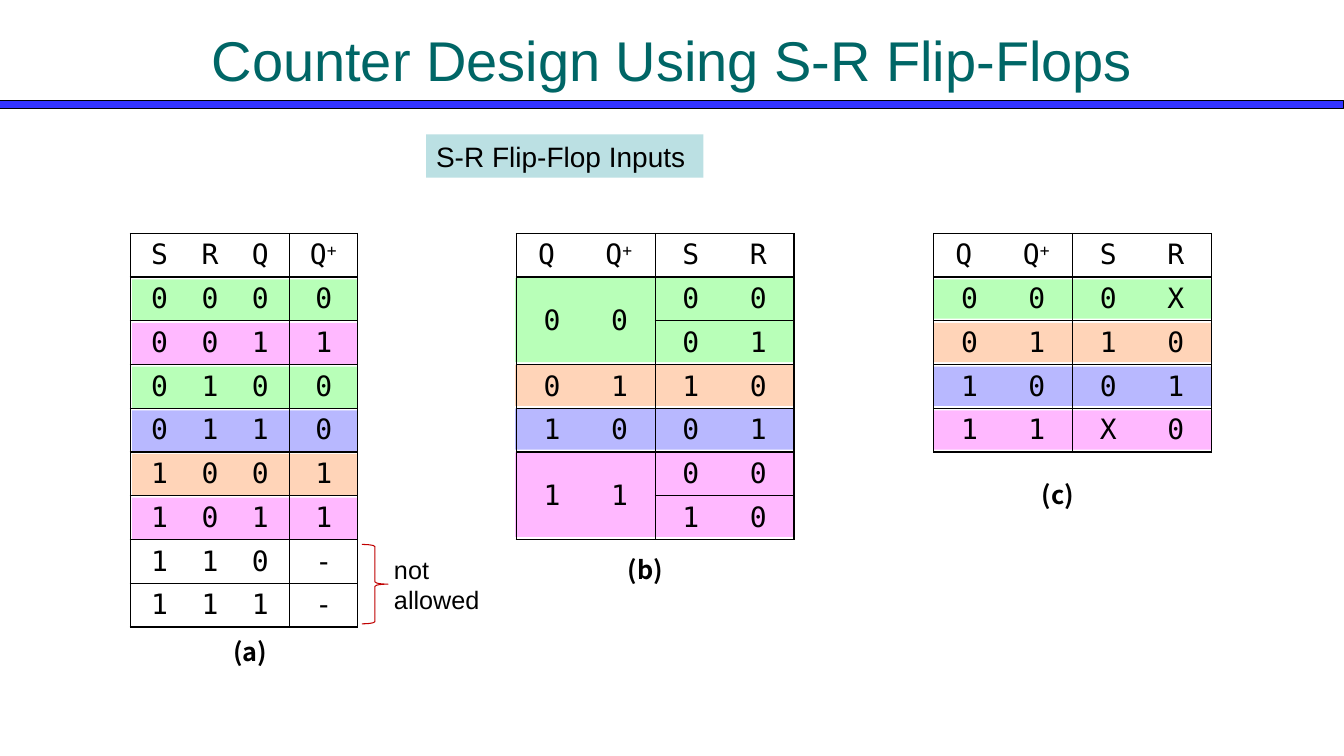
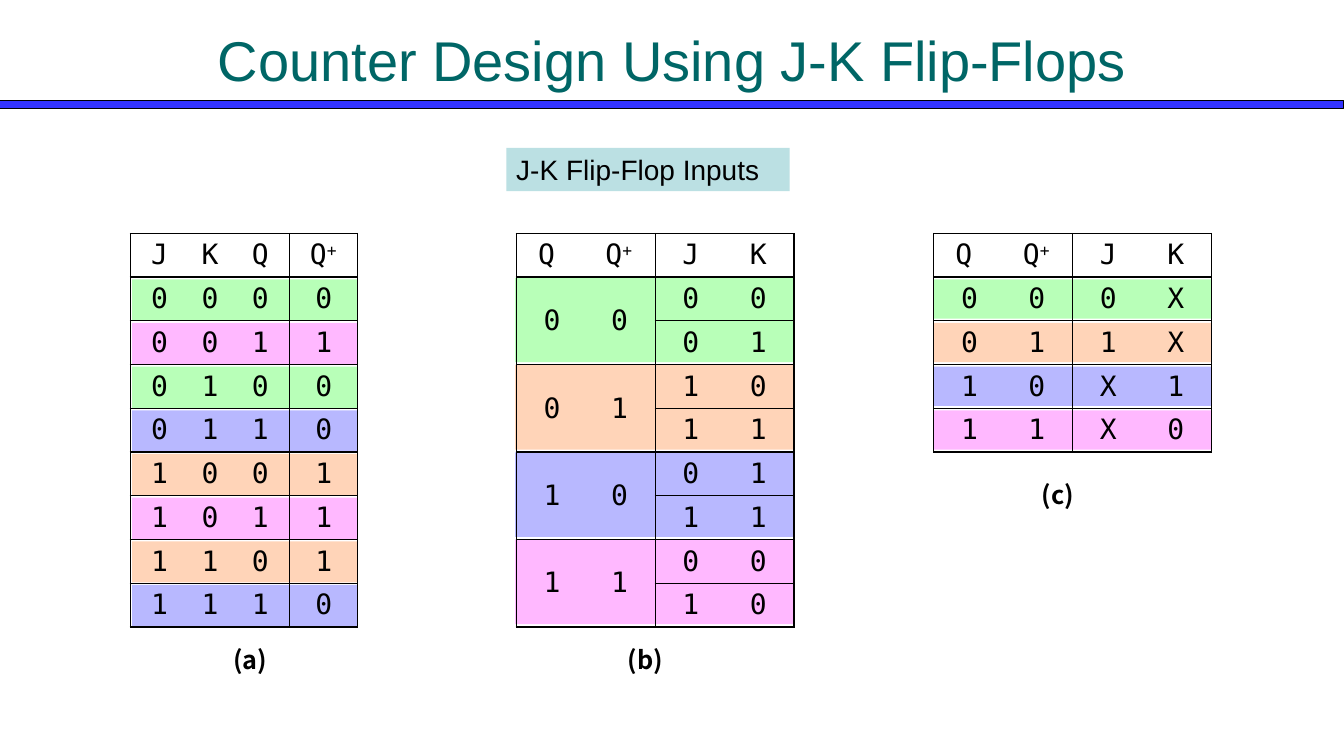
from itertools import groupby
from lxml.etree import SubElement
from pptx import Presentation
from pptx.dml.color import RGBColor
from pptx.enum.shapes import MSO_SHAPE
from pptx.enum.text import MSO_ANCHOR, PP_ALIGN
from pptx.oxml import parse_xml
from pptx.oxml.ns import nsdecls, qn
from pptx.util import Cm, Pt

# Colours
BLACK = RGBColor(0x00, 0x00, 0x00)
TEAL = RGBColor(0x00, 0x66, 0x66)
BAND_BLUE = RGBColor(0x33, 0x33, 0xFF)
LABEL_BLUE = RGBColor(0xBB, 0xE0, 0xE3)
BRACE_RED = RGBColor(0xC0, 0x00, 0x00)
TRANSITION_COLOURS = {  # Q followed by Q+
    "00": RGBColor(0x00, 0xFF, 0x00),
    "01": RGBColor(0xFF, 0x66, 0x00),
    "10": RGBColor(0x00, 0x00, 0xFF),
    "11": RGBColor(0xFF, 0x00, 0xFF),
}
HIGHLIGHT_ALPHA = "28000"

# Text formats
TITLE_FONT = {"name": "Arial", "size": Pt(40), "bold": False}
LABEL_FONT = {"name": "Arial", "size": Pt(20)}
NOTE_FONT = {"name": "Arial", "size": Pt(18)}
CAPTION_FONT = {"name": "Noto Sans CJK KR", "size": Pt(18), "bold": True}
CELL_FONT = {"name": "DejaVu Sans Mono", "size": Pt(20), "bold": False}

# Table measures in cm
TABLE_TOP, ROW_HEIGHT = 5.88, 1.1
SYMBOL_WIDTH, PLUS_WIDTH = 0.42, 0.28
SYMBOL_PITCH = {1: 0, 2: 1.7, 3: 1.27}  # by symbols in a cell
TABLE_LEFTS = [3.28, 13.01, 23.53]
COLUMN_WIDTHS = [(4.02, 1.72), (3.5, 3.5), (3.5, 3.5)]
HIGHLIGHTS = [  # left, width, distance below the row's top, gap
    (3.33, 5.69, 0.06, 0.06), (12.98, 7.01, 0.02, 0.07), (23.52, 7.01, 0.06, 0.11)]
CAPTIONS = ["(a)", "(b)", "(c)"]
CAPTION_CENTRES = [6.3, 16.27, 26.66]

# Each table row holds the symbols of its left and right cell
SLIDES = [
    {
        "title": "Counter Design Using S-R Flip-Flops",
        "label": ("S-R Flip-Flop Inputs", 10.74, 3.39, 6.99, 1.09),
        "caption_tops": [15.9, 13.84, 11.96],
        "not_allowed": True,
        "tables": [
            ["SRQ Q+", "000 0", "001 1", "010 0", "011 0", "100 1", "101 1", "110 -", "111 -"],
            ["QQ+ SR", "00 00", "00 01", "01 10", "10 01", "11 00", "11 10"],
            ["QQ+ SR", "00 0X", "01 10", "10 01", "11 X0"],
        ],
    },
    {
        "title": "Counter Design Using J-K Flip-Flops",
        "label": ("J-K Flip-Flop Inputs", 12.76, 3.73, 7.14, 1.09),
        "caption_tops": [16.11, 16.11, 11.96],
        "not_allowed": False,
        "tables": [
            ["JKQ Q+", "000 0", "001 1", "010 0", "011 0", "100 1", "101 1", "110 1", "111 0"],
            ["QQ+ JK", "00 00", "00 01", "01 10", "01 11", "10 01", "10 11", "11 00", "11 10"],
            ["QQ+ JK", "00 0X", "01 1X", "10 X1", "11 X0"],
        ],
    },
]


def add_run(paragraph, text, font_format, colour=BLACK):
    run = paragraph.add_run()
    run.text = text
    for name, value in font_format.items():
        setattr(run.font, name, value)
    run.font.color.rgb = colour
    return run


def add_text_box(slide, text, left, top, width, height, font_format):
    box = slide.shapes.add_textbox(Cm(left), Cm(top), Cm(width), Cm(height))
    box.text_frame.word_wrap = True
    add_run(box.text_frame.paragraphs[0], text, font_format)
    return box


presentation = Presentation()
presentation.slide_width = Cm(33.87)
presentation.slide_height = Cm(19.05)
title_only = presentation.slide_layouts[5]

for content in SLIDES:
    slide = presentation.slides.add_slide(title_only)

    # Title and band
    title = slide.shapes.title
    title_box = {"left": Cm(1.69), "top": Cm(0.78), "width": Cm(30.48), "height": Cm(1.42)}
    for name, value in title_box.items():
        setattr(title, name, value)
    title.text_frame.vertical_anchor = MSO_ANCHOR.MIDDLE
    title_paragraph = title.text_frame.paragraphs[0]
    title_paragraph.alignment = PP_ALIGN.CENTER
    add_run(title_paragraph, content["title"], TITLE_FONT, TEAL)

    band = slide.shapes.add_shape(
        MSO_SHAPE.RECTANGLE, 0, Cm(2.53), presentation.slide_width, Cm(0.2))
    band.shadow.inherit = False
    band.fill.solid()
    band.fill.fore_color.rgb = BAND_BLUE
    band.line.color.rgb = BLACK
    band.line.width = Pt(0.75)

    # Label above the tables
    label = add_text_box(slide, *content["label"], LABEL_FONT)
    label.fill.solid()
    label.fill.fore_color.rgb = LABEL_BLUE

    for left, widths, highlight, rows in zip(
            TABLE_LEFTS, COLUMN_WIDTHS, HIGHLIGHTS, content["tables"]):
        cell_pairs = [row.split() for row in rows]

        # Translucent highlights, one for each run of equal transitions
        highlight_left, highlight_width, offset, gap = highlight
        transitions = [inputs if len(inputs) == 2 else inputs[-1] + outputs
                       for inputs, outputs in cell_pairs]
        row_top = TABLE_TOP
        for transition, group in groupby(transitions):
            group_height = ROW_HEIGHT * len(list(group))
            if transition in TRANSITION_COLOURS:
                shape = slide.shapes.add_shape(
                    MSO_SHAPE.RECTANGLE, Cm(highlight_left), Cm(row_top + offset),
                    Cm(highlight_width), Cm(group_height - gap))
                shape.shadow.inherit = False
                shape.line.fill.background()
                shape.fill.solid()
                shape.fill.fore_color.rgb = TRANSITION_COLOURS[transition]
                colour_element = shape._element.spPr.find(".//" + qn("a:srgbClr"))
                SubElement(colour_element, qn("a:alpha"), val=HIGHLIGHT_ALPHA)
            row_top += group_height

        # Table
        table = slide.shapes.add_table(
            len(rows), 2, Cm(left), Cm(TABLE_TOP),
            Cm(sum(widths)), Cm(ROW_HEIGHT * len(rows))).table
        table.first_row = table.horz_banding = False
        for column, width in zip(table.columns, widths):
            column.width = Cm(width)

        previous_inputs = None
        for row_index, (inputs, outputs) in enumerate(cell_pairs):
            table.rows[row_index].height = Cm(ROW_HEIGHT)
            repeated = inputs == previous_inputs
            previous_inputs = inputs

            for column_index, symbols in enumerate((inputs, outputs)):
                cell = table.cell(row_index, column_index)
                cell.vertical_anchor = MSO_ANCHOR.MIDDLE
                cell.fill.background()

                # Borders come before the fill in the cell properties
                properties = cell._tc.get_or_add_tcPr()
                for position, side in enumerate("LRTB"):
                    properties.insert(position, parse_xml(
                        f'<a:ln{side} {nsdecls("a")} w="12700"><a:solidFill>'
                        f'<a:srgbClr val="{BLACK}"/></a:solidFill></a:ln{side}>'))

                if repeated and column_index == 0:
                    table.cell(row_index - 1, 0).merge(cell)
                    continue

                # Symbols stand on tab stops, centred as a group
                letters = symbols.rstrip("+")
                has_plus = symbols != letters
                pitch = SYMBOL_PITCH[len(letters)]
                group_width = pitch * (len(letters) - 1) + SYMBOL_WIDTH + PLUS_WIDTH * has_plus
                cell.margin_left = Cm((widths[column_index] - group_width) / 2)
                cell.margin_right = 0
                paragraph = cell.text_frame.paragraphs[0]
                paragraph.alignment = PP_ALIGN.LEFT
                tab_list = SubElement(paragraph._p.get_or_add_pPr(), qn("a:tabLst"))
                for stop in range(1, len(letters)):
                    SubElement(tab_list, qn("a:tab"), pos=str(Cm(pitch * stop)), algn="l")
                add_run(paragraph, "\t".join(letters), CELL_FONT)
                if has_plus:
                    plus = add_run(paragraph, "+", CELL_FONT)
                    plus.font._element.set("baseline", "30000")

    # Captions
    for caption, centre, top in zip(CAPTIONS, CAPTION_CENTRES, content["caption_tops"]):
        box = add_text_box(slide, caption, centre - 1.27, top, 2.54, 1.02, CAPTION_FONT)
        box.text_frame.paragraphs[0].alignment = PP_ALIGN.CENTER

    # Brace for the input pairs that are not allowed
    if content["not_allowed"]:
        add_text_box(slide, "not allowed", 9.68, 13.84, 2.79, 1.8, NOTE_FONT)
        brace = slide.shapes.add_shape(
            MSO_SHAPE.RIGHT_BRACE, Cm(9.12), Cm(13.72), Cm(0.66), Cm(2))
        brace.shadow.inherit = False
        brace.fill.background()
        brace.line.color.rgb = BRACE_RED
        brace.line.width = Pt(0.75)

presentation.save("out.pptx")
